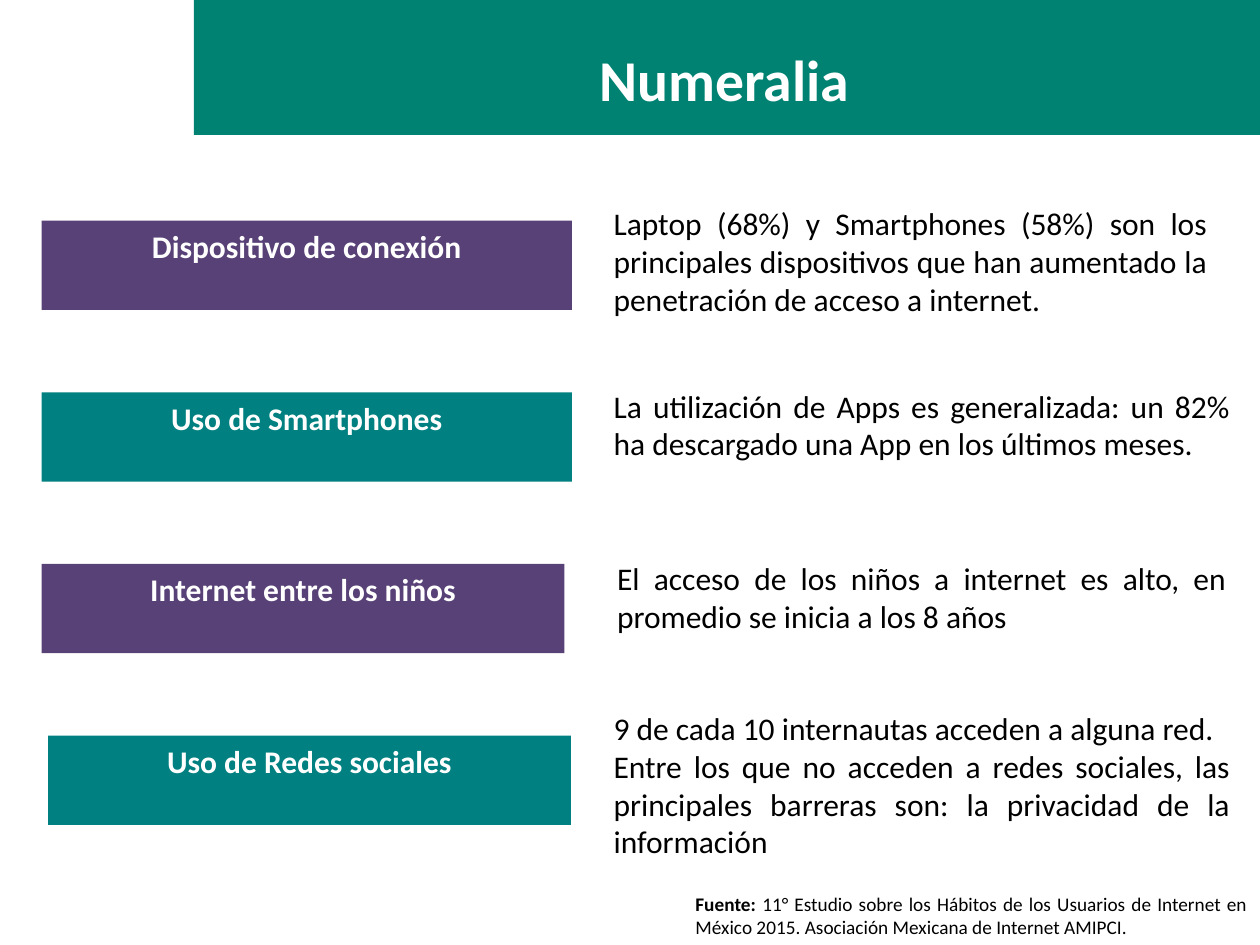
from pptx import Presentation
from pptx.dml.color import RGBColor
from pptx.enum.shapes import MSO_SHAPE
from pptx.enum.text import MSO_ANCHOR, MSO_AUTO_SIZE, PP_ALIGN
from pptx.util import Cm, Pt

RECTANGLE = MSO_SHAPE.RECTANGLE
TOP = MSO_ANCHOR.TOP
NO_AUTOFIT = MSO_AUTO_SIZE.NONE
LEFT, CENTER, JUSTIFY = PP_ALIGN.LEFT, PP_ALIGN.CENTER, PP_ALIGN.JUSTIFY

FONT = "Calibri"
COLORS = {
    "banner": "008272",
    "purple": "584177",
    "teal": "008080",
    "white": "FFFFFF",
    "black": "000000",
}
ROW_TOP, ROW_PITCH, LABEL_HEIGHT = 4.45, 3.46, 1.8

# Each row: label, color, label left and width, text left, width, height and offset, paragraphs
ROWS = [
    ("Dispositivo de conexión", "purple", (0.84, 10.69), (12.12, 12.47, 2.57, -0.46), [
        (JUSTIFY, "Laptop (68%) y Smartphones (58%) son los principales dispositivos "
                  "que han aumentado la penetración de acceso a internet."),
    ]),
    ("Uso de Smartphones", "teal", (0.84, 10.69), (12.12, 12.93, 2.57, -0.24), [
        (JUSTIFY, "La utilización de Apps es generalizada: un 82% ha descargado "
                  "una App en los últimos meses."),
    ]),
    ("Internet entre los niños", "purple", (0.84, 10.54), (12.19, 12.78, 1.8, -0.22), [
        (JUSTIFY, "El acceso de los niños a internet es alto, en promedio se inicia "
                  "a los 8 años"),
    ]),
    ("Uso de Redes sociales", "teal", (0.97, 10.54), (12.12, 12.93, 4.11, -0.66), [
        (LEFT, "9 de cada 10 internautas acceden a alguna red."),
        (JUSTIFY, "Entre los que no acceden a redes sociales, las principales barreras "
                  "son: la privacidad de la información"),
    ]),
]
SOURCE = [
    ("Fuente:", True),
    (" 11° Estudio sobre los Hábitos de los Usuarios de Internet en México 2015. "
     "Asociación Mexicana de Internet AMIPCI.", False),
]


def add_run(paragraph, text, size, color, bold=False):
    """Append one formatted run to a paragraph."""
    run = paragraph.add_run()
    run.text = text
    run.font.name = FONT
    run.font.size = Pt(size)
    run.font.bold = bold
    run.font.color.rgb = RGBColor.from_string(COLORS[color])


def prepare_frame(shape):
    """Return the wrapping, top-anchored text frame of a shape."""
    frame = shape.text_frame
    frame.word_wrap = True
    frame.auto_size = NO_AUTOFIT
    frame.vertical_anchor = TOP
    return frame


def add_rectangle(slide, left, top, width, height, color):
    """Add a flat rectangle without outline or shadow."""
    shape = slide.shapes.add_shape(RECTANGLE, Cm(left), Cm(top), Cm(width), Cm(height))
    shape.shadow.inherit = False
    shape.fill.solid()
    shape.fill.fore_color.rgb = RGBColor.from_string(COLORS[color])
    shape.line.fill.background()
    return shape


def add_text(slide, left, top, width, height, size, paragraphs):
    """Add a text box from pairs of alignment and runs."""
    box = slide.shapes.add_textbox(Cm(left), Cm(top), Cm(width), Cm(height))
    frame = prepare_frame(box)
    for index, (alignment, runs) in enumerate(paragraphs):
        paragraph = frame.add_paragraph() if index else frame.paragraphs[0]
        paragraph.alignment = alignment
        for text, bold in runs:
            add_run(paragraph, text, size, "black", bold)


def add_header(slide, left, top, width, height):
    """Place the banner and set the slide title over it."""
    banner = add_rectangle(slide, left, top, width, height, "banner")
    title = slide.shapes.title
    title.element.addprevious(banner.element)
    title.left, title.top = Cm(0), Cm(top + 0.76)
    title.width, title.height = Cm(29.21), Cm(3.68)
    paragraph = prepare_frame(title).paragraphs[0]
    paragraph.alignment = CENTER
    add_run(paragraph, "Numeralia", 33, "white", True)


def add_row(slide, top, label, color, label_box, text_box, paragraphs):
    """Place a colored label and its explanation relative to the row top."""
    label_left, label_width = label_box
    shape = add_rectangle(slide, label_left, top, label_width, LABEL_HEIGHT, color)
    paragraph = prepare_frame(shape).paragraphs[0]
    paragraph.alignment = CENTER
    add_run(paragraph, label, 18, "white", True)
    left, width, height, offset = text_box
    add_text(slide, left, top + offset, width, height, 18,
             [(alignment, [(text, False)]) for alignment, text in paragraphs])


def main():
    """Build and save the presentation."""
    presentation = Presentation()
    presentation.slide_width, presentation.slide_height = Cm(25.4), Cm(19.05)
    slide = presentation.slides.add_slide(presentation.slide_layouts.get_by_name("Title Only"))
    add_header(slide, 3.91, 0, 21.49, 2.72)
    for index, row in enumerate(ROWS):
        add_row(slide, ROW_TOP + index * ROW_PITCH, *row)
    add_text(slide, 13.77, 17.86, 11.63, 1.19, 11, [(JUSTIFY, SOURCE)])
    presentation.save("out.pptx")


if __name__ == "__main__":
    main()
